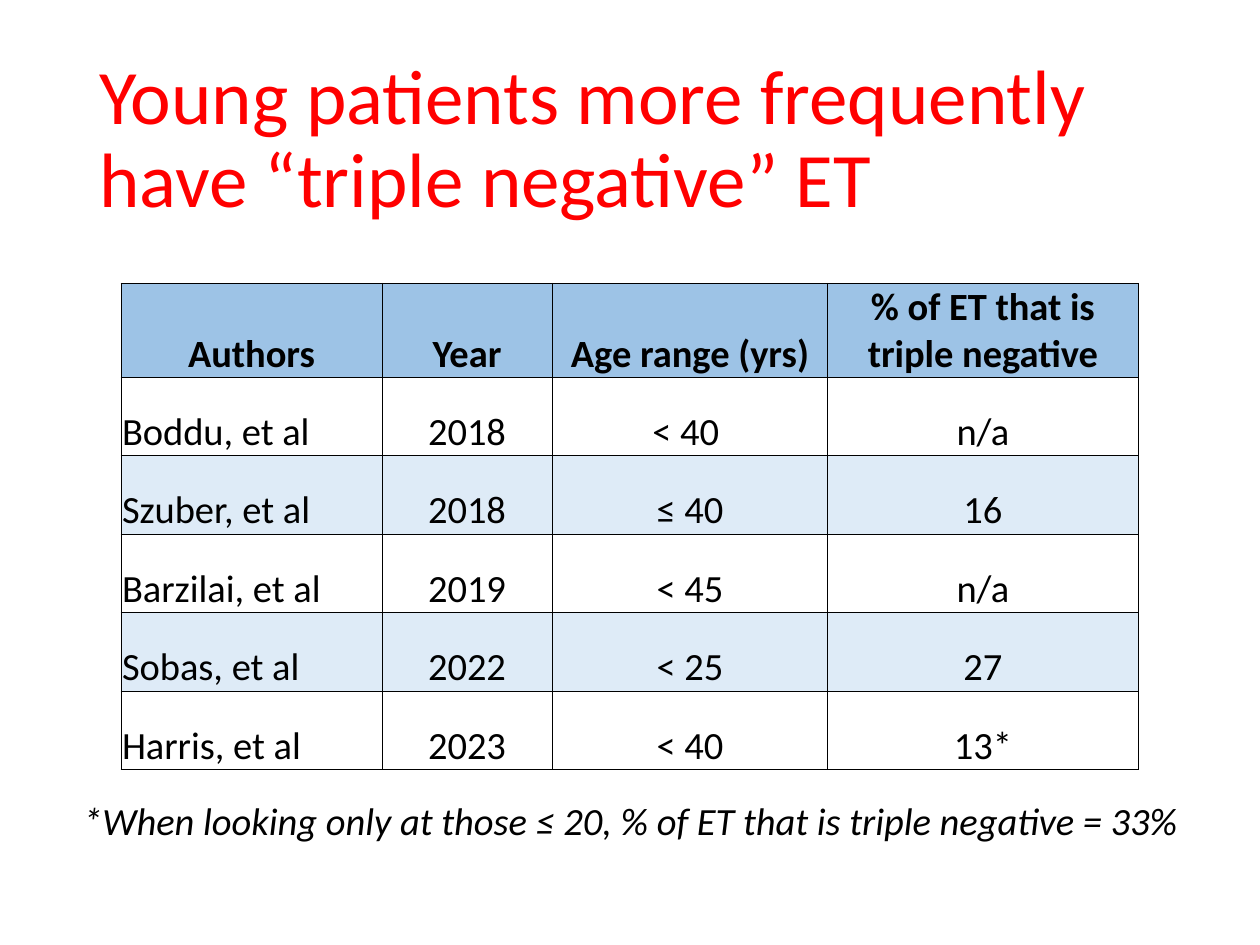
from lxml.etree import SubElement
from pptx import Presentation
from pptx.dml.color import RGBColor
from pptx.enum.text import MSO_ANCHOR as Anchor, PP_ALIGN as Align
from pptx.oxml.ns import qn
from pptx.util import Cm, Pt

RED = RGBColor(0xFF, 0x00, 0x00)
BLACK = RGBColor(0x00, 0x00, 0x00)
HEADER_BLUE = RGBColor(0x9D, 0xC3, 0xE6)
BAND_BLUE = RGBColor(0xDE, 0xEB, 0xF7)

TITLE = "Young patients more frequently have “triple negative” ET"
FOOTNOTE = "*When looking only at those ≤ 20, % of ET that is triple negative = 33%"
STUDIES = [
    ("Authors", "Year", "Age range (yrs)", "% of ET that is triple negative"),
    ("Boddu, et al", "2018", "< 40 ", "n/a"),
    ("Szuber, et al", "2018", "≤ 40", "16"),
    ("Barzilai, et al", "2019", "< 45", "n/a"),
    ("Sobas, et al", "2022", "< 25", "27"),
    ("Harris, et al", "2023", "< 40", "13*"),
]
COLUMN_WIDTHS = [Cm(5.26), Cm(3.43), Cm(5.56), Cm(6.25)]
HEADER_HEIGHT, STUDY_HEIGHT = Cm(1.9), Cm(1.58)

TITLE_FONT = {"name": "Calibri", "size": Pt(44)}
BODY_FONT = {"name": "Calibri", "size": Pt(22)}
CELL_FORMAT = {
    "vertical_anchor": Anchor.BOTTOM,
    "margin_left": Cm(0.02),
    "margin_right": Cm(0.02),
    "margin_top": Cm(0.02),
    "margin_bottom": 0,
}


def apply_format(target, values):
    for name, value in values.items():
        setattr(target, name, value)


def write_text(frame, wording, font_format, color, align):
    paragraph = frame.paragraphs[0]
    paragraph.alignment = align
    run = paragraph.add_run()
    run.text = wording
    apply_format(run.font, font_format)
    run.font.color.rgb = color
    return paragraph


def add_text(slide, bounds, wording, font_format, color, align, anchor):
    frame = slide.shapes.add_textbox(*bounds).text_frame
    apply_format(frame, {"word_wrap": True, "vertical_anchor": anchor})
    return write_text(frame, wording, font_format, color, align)


def outline_cell(cell):
    properties = cell._tc.get_or_add_tcPr()
    for position, side in enumerate(("a:lnL", "a:lnR", "a:lnT", "a:lnB")):
        border = properties.makeelement(qn(side), {"w": str(Pt(0.5))})
        fill = SubElement(border, qn("a:solidFill"))
        SubElement(fill, qn("a:srgbClr"), val=str(BLACK))
        properties.insert(position, border)


def fill_cell(cell, row):
    if row % 2:
        cell.fill.background()
    else:
        cell.fill.solid()
        cell.fill.fore_color.rgb = BAND_BLUE if row else HEADER_BLUE


def add_study_table(slide):
    height = HEADER_HEIGHT + STUDY_HEIGHT * (len(STUDIES) - 1)
    table = slide.shapes.add_table(
        len(STUDIES), len(COLUMN_WIDTHS), Cm(2.44), Cm(5.71), sum(COLUMN_WIDTHS), height
    ).table
    for column, width in zip(table.columns, COLUMN_WIDTHS):
        column.width = width
    for row, study in enumerate(STUDIES):
        table.rows[row].height = STUDY_HEIGHT if row else HEADER_HEIGHT
        for column, wording in enumerate(study):
            cell = table.cell(row, column)
            apply_format(cell, CELL_FORMAT)
            fill_cell(cell, row)
            outline_cell(cell)
            align = Align.LEFT if row and column == 0 else Align.CENTER
            font_format = {**BODY_FONT, "bold": row == 0}
            write_text(cell.text_frame, wording, font_format, BLACK, align)


def main():
    deck = Presentation()
    apply_format(deck, {"slide_width": Cm(25.4), "slide_height": Cm(19.05)})
    slide = deck.slides.add_slide(deck.slide_layouts[6])
    title_bounds = Cm(1.75), Cm(1.01), Cm(21.9), Cm(3.68)
    title = add_text(
        slide, title_bounds, TITLE, TITLE_FONT, RED, Align.LEFT, Anchor.MIDDLE
    )
    title.line_spacing = 0.9
    add_study_table(slide)
    footnote_bounds = Cm(1.19), Cm(15.95), Cm(23.04), Cm(1.2)
    footnote_font = {**BODY_FONT, "italic": True}
    add_text(
        slide, footnote_bounds, FOOTNOTE, footnote_font, BLACK, Align.CENTER, Anchor.TOP
    )
    deck.save("out.pptx")


if __name__ == "__main__":
    main()
